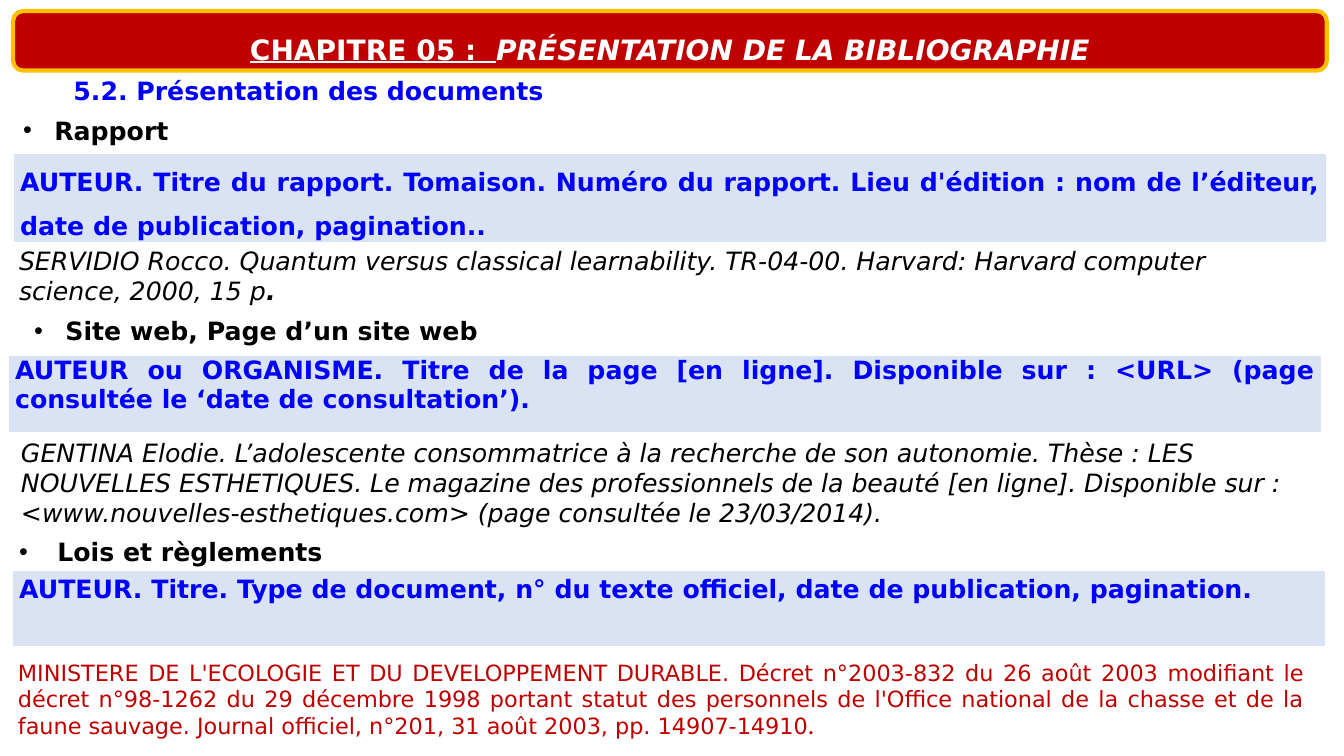
"""Build the bibliography slide on reports, web pages and laws."""
from dataclasses import dataclass

from lxml.etree import SubElement
from pptx import Presentation
from pptx.dml.color import RGBColor
from pptx.enum.shapes import MSO_SHAPE
from pptx.enum.text import MSO_ANCHOR, MSO_AUTO_SIZE, PP_ALIGN
from pptx.oxml.ns import qn
from pptx.util import Inches, Pt

RED = RGBColor(0xC0, 0x00, 0x00)
GOLD = RGBColor(0xFF, 0xC0, 0x00)
BLUE = RGBColor(0x00, 0x00, 0xFF)
PALE_BLUE = RGBColor(0xDA, 0xE3, 0xF3)
WHITE = RGBColor(0xFF, 0xFF, 0xFF)
BLACK = RGBColor(0x00, 0x00, 0x00)
FONT = "DejaVu Sans"
BAND_WIDTH = 13.03
BORDERS = {"a:lnL": 1, "a:lnR": 1, "a:lnT": 1, "a:lnB": 3}


@dataclass
class Heading:
    text: str
    left: float
    top: float
    width: float
    indent: float
    bullet: bool = True
    color: RGBColor = BLACK
    spacing: float = 1.0


@dataclass
class Model:
    text: str
    left: float
    top: float
    height: float = 0.77
    spacing: float = 1.0


@dataclass
class Example:
    text: str
    left: float
    top: float
    width: float
    height: float
    size: int = 18
    color: RGBColor = BLACK
    italic: bool = True
    align: PP_ALIGN = PP_ALIGN.LEFT
    stop: dict | None = None


HEADINGS = [
    Heading("5.2. Présentation des documents", 0.13, 0.7, 5.38, 0.5, bullet=False, color=BLUE),
    Heading("Rapport", 0.13, 1.09, 1.65, 0.31),
    Heading("Site web, Page d’un site web", 0.24, 3.08, 4.61, 0.31),
    Heading("Lois et règlements", 0.09, 5.23, 3.21, 0.38, spacing=1.15),
]
MODELS = [
    Model("AUTEUR. Titre du rapport. Tomaison. Numéro du rapport. Lieu d'édition : "
          "nom de l’éditeur, date de publication, pagination..", 0.13, 1.52, 0.84, 1.5),
    Model("AUTEUR ou ORGANISME. Titre de la page [en ligne]. Disponible sur : <URL> "
          "(page consultée le ‘date de consultation’).", 0.08, 3.53),
    Model("AUTEUR. Titre. Type de document, n° du texte officiel, date de publication, "
          "pagination.", 0.12, 5.66, spacing=1.15),
]
EXAMPLES = [
    Example("SERVIDIO Rocco. Quantum versus classical learnability. TR-04-00. Harvard: "
            "Harvard computer science, 2000, 15 p", 0.09, 2.38, 13.01, 0.71,
            stop={"bold": True, "italic": True}),
    Example("GENTINA Elodie. L’adolescente consommatrice à la recherche de son autonomie. "
            "Thèse : LES NOUVELLES ESTHETIQUES. Le magazine des professionnels de la beauté "
            "[en ligne]. Disponible sur : <www.nouvelles-esthetiques.com> (page consultée "
            "le 23/03/2014).", 0.11, 4.28, 13.05, 1.01),
    Example("MINISTERE DE L'ECOLOGIE ET DU DEVELOPPEMENT DURABLE. Décret n°2003-832 du "
            "26 août 2003 modifiant le décret n°98-1262 du 29 décembre 1998 portant statut "
            "des personnels de l'Office national de la chasse et de la faune sauvage. "
            "Journal officiel, n°201, 31 août 2003, pp. 14907-14910", 0.08, 6.48, 12.96, 0.91,
            size=16, color=RED, italic=False, align=PP_ALIGN.JUSTIFY,
            stop={"size": 14, "font": "Times New Roman", "bold": True}),
]


def add_text(p, text: str, *, size: int = 18, color: RGBColor = BLACK, font: str = FONT,
             bold: bool = False, italic: bool = False, underline: bool = False) -> None:
    r = p.add_run()
    r.text = text
    f = r.font
    f.name, f.size, f.color.rgb = font, Pt(size), color
    f.bold, f.italic, f.underline = bold, italic, underline


def add_box(s, left: float, top: float, width: float, height: float, wrap: bool):
    sp = s.shapes.add_textbox(Inches(left), Inches(top), Inches(width), Inches(height))
    tf = sp.text_frame
    tf.word_wrap = wrap
    tf.auto_size = MSO_AUTO_SIZE.SHAPE_TO_FIT_TEXT
    return tf


def add_title(s) -> None:
    place = Inches(0.13), Inches(0.11), Inches(BAND_WIDTH), Inches(0.59)
    banner = s.shapes.add_shape(MSO_SHAPE.FLOWCHART_ALTERNATE_PROCESS, *place)
    banner.shadow.inherit = False
    banner.fill.solid()
    banner.fill.fore_color.rgb = RED
    banner.line.color.rgb = GOLD
    banner.line.width = Pt(3)
    title = s.shapes.title
    title.element.addprevious(banner.element)
    title.left, title.top, title.width, title.height = place
    tf = title.text_frame
    tf.auto_size = MSO_AUTO_SIZE.NONE
    tf.vertical_anchor = MSO_ANCHOR.TOP
    p = tf.paragraphs[0]
    p.alignment = PP_ALIGN.CENTER
    p.line_spacing = 1.5
    p.space_before = Pt(0)
    add_text(p, "CHAPITRE 05 :  ", size=20, color=WHITE, bold=True, underline=True)
    add_text(p, "PRÉSENTATION DE LA BIBLIOGRAPHIE", size=20, color=WHITE, bold=True, italic=True)


def add_heading(s, h: Heading) -> None:
    p = add_box(s, h.left, h.top, h.width, 0.4, wrap=False).paragraphs[0]
    p.line_spacing = h.spacing
    pPr = p._p.get_or_add_pPr()
    pPr.set("marL", str(Inches(h.indent)))
    if h.bullet:
        pPr.set("indent", str(-Inches(h.indent)))
        SubElement(pPr, qn("a:buFont"), typeface="Arial")
        SubElement(pPr, qn("a:buChar"), char="•")
    add_text(p, h.text, color=h.color, bold=True)


def add_model(s, m: Model) -> None:
    table = s.shapes.add_table(1, 1, Inches(m.left), Inches(m.top),
                               Inches(BAND_WIDTH), Inches(m.height)).table
    table.first_row = table.horz_banding = False
    cell = table.cell(0, 0)
    cell.margin_left = cell.margin_right = Inches(0.07)
    cell.margin_top = cell.margin_bottom = 0
    tcPr = cell._tc.get_or_add_tcPr()
    for tag, width in BORDERS.items():
        ln = SubElement(tcPr, qn(tag), w=str(Pt(width)))
        SubElement(SubElement(ln, qn("a:solidFill")), qn("a:srgbClr"), val=str(WHITE))
    cell.fill.solid()
    cell.fill.fore_color.rgb = PALE_BLUE
    p = cell.text_frame.paragraphs[0]
    p.alignment = PP_ALIGN.JUSTIFY
    p.line_spacing = m.spacing
    add_text(p, m.text, color=BLUE, bold=True)


def add_example(s, e: Example) -> None:
    tf = add_box(s, e.left, e.top, e.width, e.height, wrap=True)
    tf.vertical_anchor = MSO_ANCHOR.MIDDLE
    p = tf.paragraphs[0]
    p.alignment = e.align
    add_text(p, e.text, size=e.size, color=e.color, italic=e.italic)
    if e.stop:
        add_text(p, ".", color=e.color, **e.stop)


def main() -> None:
    prs = Presentation()
    prs.slide_width, prs.slide_height = Inches(13.33), Inches(7.5)
    s = prs.slides.add_slide(prs.slide_layouts[5])
    add_title(s)
    for h in HEADINGS:
        add_heading(s, h)
    for m in MODELS:
        add_model(s, m)
    for e in EXAMPLES:
        add_example(s, e)
    prs.save("out.pptx")


if __name__ == "__main__":
    main()
